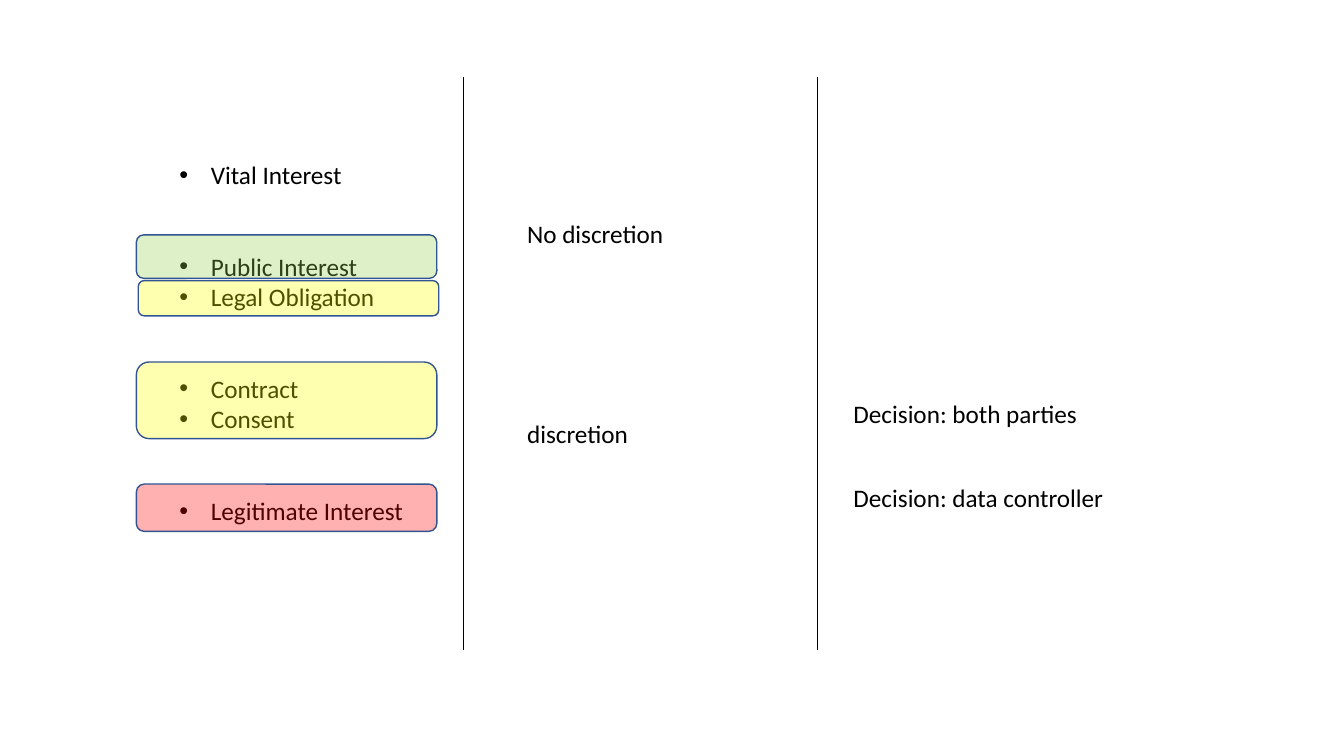
import pptx
import pptx.dml.color
import pptx.enum.shapes
import pptx.enum.text
import pptx.oxml.ns
import pptx.util
from lxml import etree

Pt = pptx.util.Pt
RGBColor = pptx.dml.color.RGBColor
BLACK = RGBColor(0x00, 0x00, 0x00)
OUTLINE = RGBColor(0x32, 0x54, 0x91)
GREEN = RGBColor(0x92, 0xD0, 0x50)
YELLOW = RGBColor(0xFF, 0xFF, 0x00)
RED = RGBColor(0xFF, 0x00, 0x00)

FONT = "Calibri"
TEXT_SIZE = 18
GROUP_GAP = 44
BULLET_INDENT = 22.5
HIGHLIGHT_OPACITY = 31

LEGAL_BASES = [
    ["Vital Interest"],
    ["Public Interest", "Legal Obligation"],
    ["Contract", "Consent"],
    ["Legitimate Interest"],
]
HIGHLIGHTS = [
    (1.4, 90.2, 25.2, YELLOW),
    (0, 57.6, 31, GREEN),
    (0, 148.4, 54.7, YELLOW),
    (0, 235.6, 33.8, RED),
]
DISCRETION_LABELS = [("No discretion", 0), ("discretion", 142.6)]
DECISION_LABELS = [("Decision: both parties", 0), ("Decision: data controller", 60.5)]


def add_sub(parent, tag, **attributes):
    """Append a DrawingML child element and return it."""
    return etree.SubElement(parent, pptx.oxml.ns.qn(tag), **attributes)


def add_text(slide, left, top, width, height, lines):
    """Place a wrapping text box and return its paragraphs."""
    frame = slide.shapes.add_textbox(Pt(left), Pt(top), Pt(width), Pt(height)).text_frame
    frame.word_wrap = True
    frame.auto_size = pptx.enum.text.MSO_AUTO_SIZE.SHAPE_TO_FIT_TEXT
    frame.text = "\n".join(lines)
    for paragraph in frame.paragraphs:
        for run in paragraph.runs:
            run.font.name = FONT
            run.font.size = Pt(TEXT_SIZE)
            run.font.color.rgb = BLACK
    return frame.paragraphs


def add_legal_bases(slide, left, top, width, height):
    """List the legal bases as bullets, with a gap before each later group."""
    bases = [basis for group in LEGAL_BASES for basis in group]
    group_starts = [group[0] for group in LEGAL_BASES[1:]]
    for paragraph in add_text(slide, left, top, width, height, bases):
        if paragraph.text in group_starts:
            paragraph.space_before = Pt(GROUP_GAP)
        properties = paragraph._p.get_or_add_pPr()
        properties.set("marL", str(Pt(BULLET_INDENT)))
        properties.set("indent", str(-Pt(BULLET_INDENT)))
        add_sub(properties, "a:buFont", typeface="Arial")
        add_sub(properties, "a:buChar", char="•")


def add_labels(slide, left, top, width, height, labels):
    """Place a column of labels at their offsets below the top."""
    for label, offset in labels:
        add_text(slide, left, top + offset, width, height, [label])


def add_dividers(slide, top, bottom, positions):
    """Draw the vertical rules between the columns."""
    for x in positions:
        divider = slide.shapes.add_connector(
            pptx.enum.shapes.MSO_CONNECTOR.STRAIGHT, Pt(x), Pt(top), Pt(x), Pt(bottom)
        )
        divider.line.color.rgb = BLACK
        divider.line.width = Pt(0.5)
        add_sub(divider._element.spPr, "a:effectLst")


def add_highlights(slide, left, top, width):
    """Lay translucent rounded boxes over the groups of legal bases."""
    for shift, offset, height, color in HIGHLIGHTS:
        highlight = slide.shapes.add_shape(
            pptx.enum.shapes.MSO_SHAPE.ROUNDED_RECTANGLE,
            Pt(left + shift), Pt(top + offset), Pt(width), Pt(height),
        )
        highlight.shadow.inherit = False
        highlight.fill.solid()
        highlight.fill.fore_color.rgb = color
        fill_color = highlight._element.spPr.find(".//" + pptx.oxml.ns.qn("a:srgbClr"))
        add_sub(fill_color, "a:alpha", val=str(HIGHLIGHT_OPACITY * 1000))
        highlight.line.color.rgb = OUTLINE
        highlight.line.width = Pt(1)


def main():
    """Build the slide of legal bases and save it."""
    presentation = pptx.Presentation()
    presentation.slide_width = Pt(960)
    presentation.slide_height = Pt(540)
    slide = presentation.slides.add_slide(presentation.slide_layouts[6])
    add_legal_bases(slide, 121, 110.2, 210.2, 269.3)
    add_labels(slide, 369.4, 152.6, 285.8, 29, DISCRETION_LABELS)
    add_labels(slide, 602.6, 280.8, 285.8, 29, DECISION_LABELS)
    add_dividers(slide, 55, 464.4, [331.2, 583.9])
    add_highlights(slide, 97.4, 110.2, 214.6)
    presentation.save("out.pptx")


if __name__ == "__main__":
    main()
